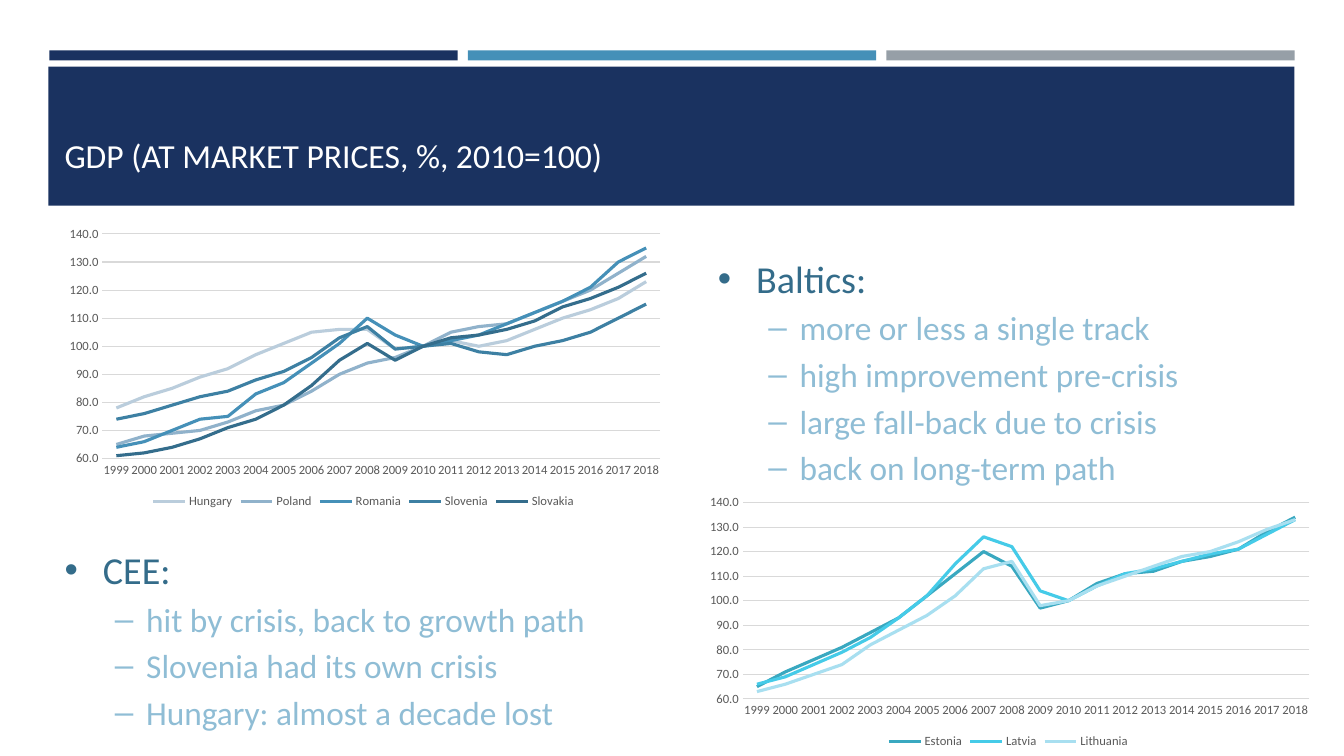
from lxml import etree
from pptx import Presentation
from pptx.chart.data import CategoryChartData
from pptx.dml.color import RGBColor
from pptx.enum.chart import XL_CHART_TYPE, XL_LEGEND_POSITION, XL_MARKER_STYLE, XL_TICK_MARK
from pptx.enum.shapes import MSO_SHAPE
from pptx.enum.text import MSO_ANCHOR, MSO_AUTO_SIZE, PP_ALIGN
from pptx.oxml.ns import qn
from pptx.util import Inches, Pt

LINE_CHART = XL_CHART_TYPE.LINE
LEGEND_BOTTOM = XL_LEGEND_POSITION.BOTTOM
NO_MARKER = XL_MARKER_STYLE.NONE
NO_TICK = XL_TICK_MARK.NONE
RECTANGLE = MSO_SHAPE.RECTANGLE
TOP, BOTTOM = MSO_ANCHOR.TOP, MSO_ANCHOR.BOTTOM
NO_AUTOFIT = MSO_AUTO_SIZE.NONE
LEFT = PP_ALIGN.LEFT

FONT = "Calibri"
COLORS = {
    "navy": "1A3260", "blue": "4590B8", "gray": "969FA7", "white": "FFFFFF",
    "black": "000000", "heading": "346C8A", "item": "8FBDD5",
    "label": "595959", "grid": "D9D9D9",
    "Hungary": "BACDDC", "Poland": "90B2CB", "Romania": "4590B8",
    "Slovenia": "3D80A3", "Slovakia": "346D8C",
    "Estonia": "39A8C0", "Latvia": "45CBE8", "Lithuania": "A8DFF0",
}
LEVELS = [
    {"size": 27.2, "color": "heading", "margin": 0.38, "indent": -0.38, "bullet": "•"},
    {"size": 23.8, "color": "item", "margin": 0.81, "indent": -0.31, "bullet": "–"},
]
YEARS = [str(year) for year in range(1999, 2019)]
CEE_GDP = {
    "Hungary": [78, 82, 85, 89, 92, 97, 101, 105, 106, 106,
                99, 100, 102, 100, 102, 106, 110, 113, 117, 123],
    "Poland": [65, 68, 69, 70, 73, 77, 79, 84, 90, 94,
               96, 100, 105, 107, 108, 112, 116, 120, 126, 132],
    "Romania": [64, 66, 70, 74, 75, 83, 87, 94, 101, 110,
                104, 100, 102, 104, 108, 112, 116, 121, 130, 135],
    "Slovenia": [74, 76, 79, 82, 84, 88, 91, 96, 103, 107,
                 99, 100, 101, 98, 97, 100, 102, 105, 110, 115],
    "Slovakia": [61, 62, 64, 67, 71, 74, 79, 86, 95, 101,
                 95, 100, 103, 104, 106, 109, 114, 117, 121, 126],
}
BALTIC_GDP = {
    "Estonia": [65, 71, 76, 81, 87, 93, 102, 111, 120, 114,
                97, 100, 107, 111, 112, 116, 118, 121, 128, 134],
    "Latvia": [66, 69, 74, 79, 85, 93, 102, 115, 126, 122,
               104, 100, 106, 111, 113, 116, 119, 121, 127, 133],
    "Lithuania": [63, 66, 70, 74, 82, 88, 94, 102, 113, 116,
                  98, 100, 106, 110, 114, 118, 120, 124, 129, 133],
}


def rgb(name):
    return RGBColor.from_string(COLORS[name])


def style_font(font, size, color):
    font.name = FONT
    font.size = Pt(size)
    font.bold = False
    font.color.rgb = rgb(color)


def style_line(line, color, width):
    line.color.rgb = rgb(color)
    line.width = Pt(width)


def place(shape, left, top, width, height):
    shape.left, shape.top = Inches(left), Inches(top)
    shape.width, shape.height = Inches(width), Inches(height)


def add_bar(slide, color, left, top, width, height):
    bar = slide.shapes.add_shape(
        RECTANGLE, Inches(left), Inches(top), Inches(width), Inches(height))
    bar.shadow.inherit = False
    bar.fill.solid()
    bar.fill.fore_color.rgb = rgb(color)
    bar.line.fill.background()


def prepare_frame(shape, anchor):
    frame = shape.text_frame
    frame.word_wrap = True
    frame.auto_size = NO_AUTOFIT
    frame.vertical_anchor = anchor
    return frame


def fill_title(title, text):
    place(title, 0.54, 1.32, 6.48, 0.47)
    frame = prepare_frame(title, BOTTOM)
    frame.text = text
    paragraph = frame.paragraphs[0]
    paragraph.alignment = LEFT
    style_font(paragraph.runs[0].font, 24, "white")


def format_bullet(paragraph, level):
    style = LEVELS[level]
    paragraph.level = level
    style_font(paragraph.runs[0].font, style["size"], style["color"])
    properties = paragraph._p.get_or_add_pPr()
    properties.set("marL", str(Inches(style["margin"])))
    properties.set("indent", str(Inches(style["indent"])))
    etree.SubElement(properties, qn("a:buChar"), char=style["bullet"])


def fill_list(body, heading, items, *position):
    place(body, *position)
    frame = prepare_frame(body, TOP)
    frame.text = "\n".join([heading, *items])
    for index, paragraph in enumerate(frame.paragraphs):
        format_bullet(paragraph, min(index, 1))


def format_axes(chart):
    years, values = chart.category_axis, chart.value_axis
    for axis in (years, values):
        axis.major_tick_mark = axis.minor_tick_mark = NO_TICK
        style_font(axis.tick_labels.font, 9, "label")
        axis._element.txPr.find(qn("a:bodyPr")).set("rot", "-60000000")
    style_line(years.format.line, "grid", 0.75)
    values.format.line.fill.background()
    values.minimum_scale, values.maximum_scale = 60, 140
    values.major_unit = 10
    values.has_major_gridlines = True
    style_line(values.major_gridlines.format.line, "grid", 0.75)
    values.tick_labels.number_format = "#\\ ##0.0"
    values.tick_labels.number_format_is_linked = False


def add_gdp_chart(slide, countries, left, top, width, height):
    data = CategoryChartData()
    data.categories = YEARS
    for country, values in countries.items():
        data.add_series(country, values)
    chart = slide.shapes.add_chart(
        LINE_CHART, Inches(left), Inches(top), Inches(width), Inches(height), data).chart
    style_font(chart.font, 10, "black")
    chart.has_title = False
    chart.has_legend = True
    chart.legend.position = LEGEND_BOTTOM
    chart.legend.include_in_layout = False
    style_font(chart.legend.font, 9, "label")
    format_axes(chart)
    plot = chart.plots[0]
    plot.vary_by_categories = False
    for series in plot.series:
        series.smooth = False
        series.marker.style = NO_MARKER
        style_line(series.format.line, series.name, 2.25)


def main():
    presentation = Presentation()
    presentation.slide_width = Inches(13.33)
    presentation.slide_height = Inches(7.5)
    slide = presentation.slides.add_slide(presentation.slide_layouts[3])
    title, cee_list, baltic_list = list(slide.placeholders)[:3]

    for column, color in enumerate(["navy", "blue", "gray"]):
        add_bar(slide, color, 0.49 + 4.15 * column, 0.5, 4.05, 0.1)
    add_bar(slide, "navy", 0.48, 0.66, 12.36, 1.38)
    slide.shapes._spTree.append(title._element)

    fill_title(title, "GDP (AT MARKET PRICES, %, 2010=100)")
    add_gdp_chart(slide, CEE_GDP, 0.54, 2.19, 6.13, 2.9)
    add_gdp_chart(slide, BALTIC_GDP, 6.89, 4.86, 6.22, 2.61)
    fill_list(cee_list, "CEE:", [
        "hit by crisis, back to growth path",
        "Slovenia had its own crisis",
        "Hungary: almost a decade lost",
    ], 0.54, 5.37, 5.94, 1.69)
    fill_list(baltic_list, "Baltics:", [
        "more or less a single track",
        "high improvement pre-crisis",
        "large fall-back due to crisis",
        "back on long-term path",
    ], 7.02, 2.48, 5.94, 2.1)
    presentation.save("out.pptx")


if __name__ == "__main__":
    main()
